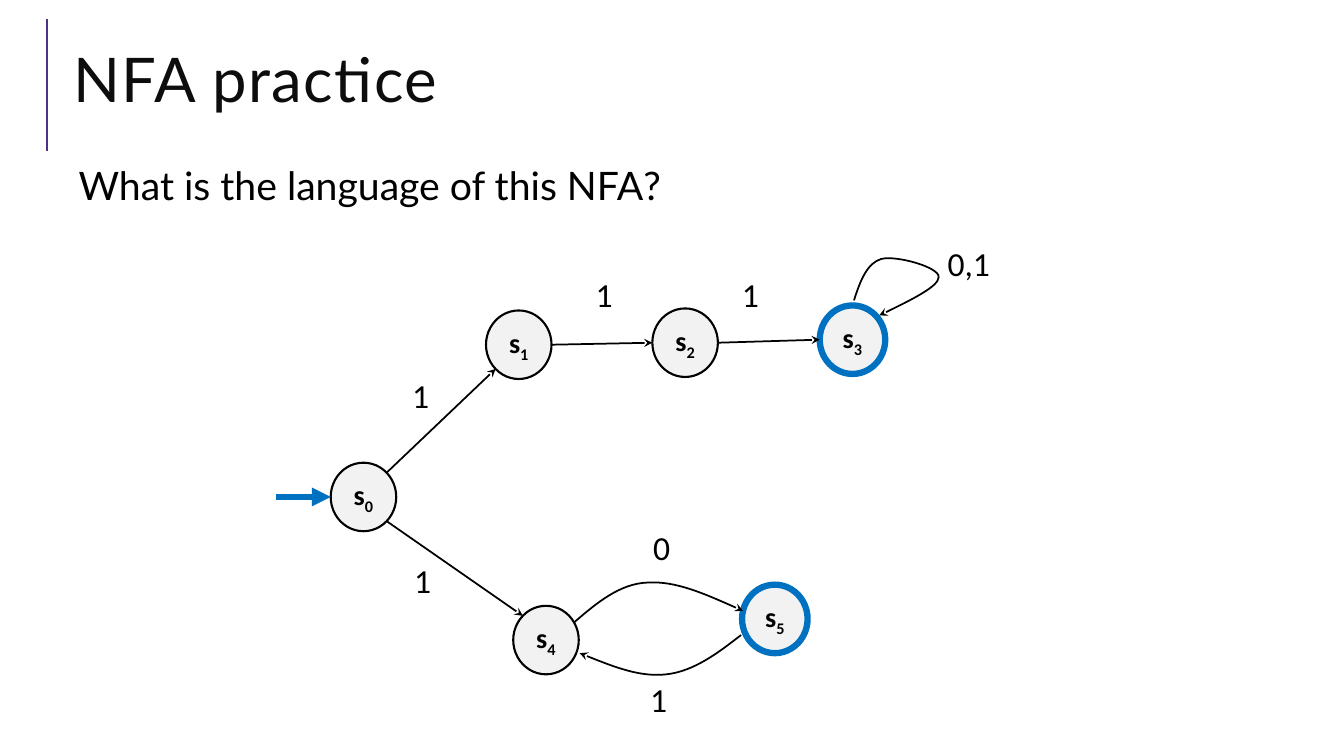
from math import cos, radians, sin

from lxml.etree import SubElement
from pptx import Presentation
from pptx.dml.color import RGBColor
from pptx.enum.shapes import MSO_CONNECTOR, MSO_SHAPE
from pptx.enum.text import MSO_ANCHOR as ANCHOR, PP_ALIGN as ALIGN
from pptx.oxml.ns import qn
from pptx.util import Inches, Pt

COLORS = {"black": "000000", "title": "0D0D0D", "blue": "0070C0",
          "state": "F2F2F2", "rule": "4C3282"}
TITLE = "NFA practice"
QUESTION = "What is the language of this NFA?"
STATE_W, STATE_H = 0.65, 0.68

# state number: (left, top)
STATES = {0: (3.28, 4.59), 1: (4.82, 3.08), 2: (6.47, 3.06),
          3: (8.13, 3.03), 4: (5.09, 6.01), 5: (7.36, 5.8)}
ACCEPTING = {3, 5}
# from state, leaving angle, to state, arriving angle (clockwise from the right)
STRAIGHT = [(0, -45, 1, 135), (0, 45, 4, 225), (1, 0, 2, 180), (2, 0, 3, 180)]
# start point, then three points for each Bezier segment
CURVES = [
    [(5.7, 6.17), (5.92, 5.98), (6.15, 5.79), (6.42, 5.78),
     (6.7, 5.76), (7.03, 5.91), (7.37, 6.06)],
    [(7.35, 6.3), (7.12, 6.48), (6.88, 6.66), (6.61, 6.69),
     (6.35, 6.72), (6.05, 6.6), (5.75, 6.48)],
    [(8.47, 2.98), (8.53, 2.79), (8.6, 2.61), (8.74, 2.57),
     (8.88, 2.53), (9.32, 2.65), (9.31, 2.75),
     (9.31, 2.84), (9.01, 2.99), (8.72, 3.13)],
]
# text, left, top, width
LABELS = [("1", 3.99, 3.67, 0.42), ("1", 4.01, 5.51, 0.42),
          ("1", 5.81, 2.67, 0.42), ("1", 7.26, 2.67, 0.42),
          ("0", 6.38, 5.18, 0.42), ("1", 6.35, 6.69, 0.42),
          ("0,1", 9.3, 2.36, 0.7)]

prs = Presentation()
prs.slide_width, prs.slide_height = Inches(13.33), Inches(7.5)
shapes = prs.slides.add_slide(prs.slide_layouts[6]).shapes


def rgb(name):
    return RGBColor.from_string(COLORS[name])


def write(sp, text, size, font="Calibri", color="black", bold=False, sub="",
          align=ALIGN.LEFT, anchor=ANCHOR.TOP, wrap=True, spacing=None,
          track=None, insets=(0.1, 0.05, 0.1, 0.05)):
    """Fill a shape with one paragraph; sub is an optional subscript."""
    tf = sp.text_frame
    tf.word_wrap, tf.vertical_anchor = wrap, anchor
    tf.margin_left, tf.margin_top, tf.margin_right, tf.margin_bottom = map(Inches, insets)
    p = tf.paragraphs[0]
    p.alignment, p.line_spacing = align, spacing
    for part in filter(None, (text, sub)):
        r = p.add_run()
        r.text = part
        r.font.name, r.font.size, r.font.bold = font, Pt(size), bold
        r.font.color.rgb = rgb(color)
        if track:
            r.font._element.set("spc", str(track))
    if sub:
        r.font._element.set("baseline", "-25000")


def text_box(left, top, width, height, text, size, **style):
    box = shapes.add_textbox(*map(Inches, (left, top, width, height)))
    write(box, text, size, **style)


def stroke(sp, color, width, head=None):
    sp.line.color.rgb, sp.line.width = rgb(color), Pt(width)
    if head:
        SubElement(sp.line._get_or_add_ln(), qn("a:tailEnd"), type=head)


def line(start, end, color="black", width=1.25, head=None):
    c = shapes.add_connector(MSO_CONNECTOR.STRAIGHT, *map(Inches, (*start, *end)))
    stroke(c, color, width, head)
    SubElement(c._element.spPr, qn("a:effectLst"))


def edge_point(state, angle):
    left, top = STATES[state]
    a = radians(angle)
    return (left + STATE_W / 2 * (1 + cos(a)), top + STATE_H / 2 * (1 + sin(a)))


def curve(points):
    """Draw a Bezier arrow: every three line segments become one cubic."""
    emu = [(Inches(x), Inches(y)) for x, y in points]
    builder = shapes.build_freeform(*emu[0])
    builder.add_line_segments(emu[1:], close=False)
    sp = builder.convert_to_shape()
    sp.shadow.inherit = False
    sp.fill.background()
    stroke(sp, "black", 1.25, "stealth")
    path = next(sp._element.iter(qn("a:path")))
    for i, seg in enumerate(path.findall(qn("a:lnTo"))):
        if i % 3 == 0:
            cubic = SubElement(path, qn("a:cubicBezTo"))
        cubic.append(seg[0])
        path.remove(seg)


line((0.47, 1.5), (0.47, 0.19), "rule", 1.5)
text_box(0.63, 0.29, 12.23, 1.11, TITLE, 44, font="Lato", color="title",
         anchor=ANCHOR.MIDDLE, spacing=0.8, track=100)
text_box(0.63, 1.6, 12.23, 0.73, QUESTION, 28, font="Lato", spacing=0.9,
         insets=(0.15, 0.05, 0.05, 0.05))

for number, (left, top) in STATES.items():
    state = shapes.add_shape(MSO_SHAPE.OVAL, *map(Inches, (left, top, STATE_W, STATE_H)))
    state.shadow.inherit = False
    state.fill.solid()
    state.fill.fore_color.rgb = rgb("state")
    stroke(state, *(("blue", 4.5) if number in ACCEPTING else ("black", 1.5)))
    write(state, "s", 20, bold=True, sub=str(number), align=ALIGN.CENTER,
          anchor=ANCHOR.MIDDLE)

for source, leave, target, arrive in STRAIGHT:
    line(edge_point(source, leave), edge_point(target, arrive), head="stealth")
for points in CURVES:
    curve(points)
start = edge_point(0, 180)
line((start[0] - 0.54, start[1]), start, "blue", 4.5, "triangle")

for text, left, top, width in LABELS:
    text_box(left, top, width, 0.59, text, 24, wrap=False)

prs.save("out.pptx")
